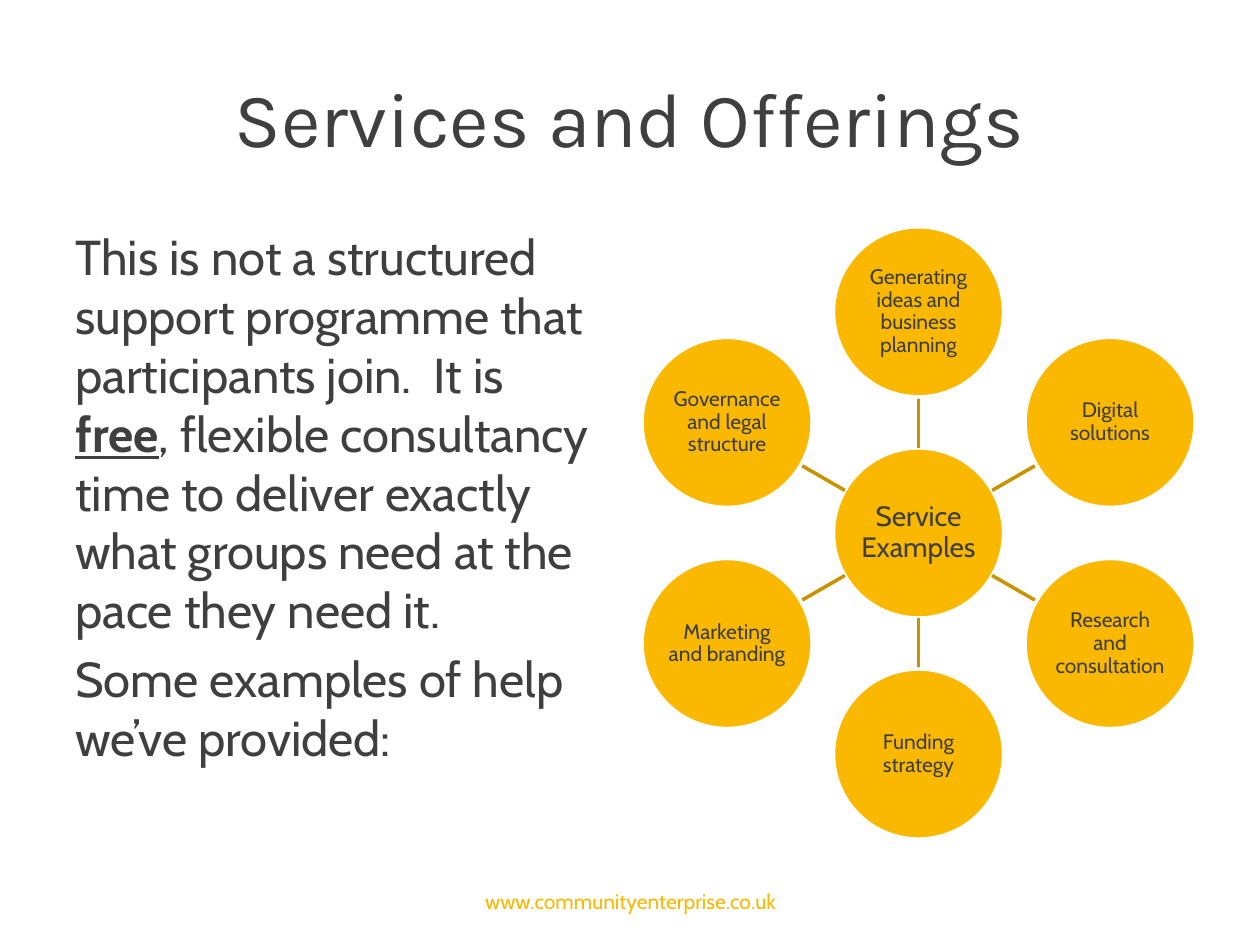
from math import cos, radians, sin

from lxml.etree import SubElement
from pptx import Presentation
from pptx.dml.color import RGBColor
from pptx.enum.shapes import MSO_CONNECTOR, MSO_SHAPE
from pptx.enum.text import MSO_ANCHOR, PP_ALIGN
from pptx.oxml.ns import qn
from pptx.util import Inches, Pt

GOLD = RGBColor(0xFB, 0xB8, 0x00)
DARK_GOLD = RGBColor(0xC9, 0x93, 0x00)
CHARCOAL = RGBColor(0x3F, 0x3F, 0x3F)
WHITE = RGBColor(0xFF, 0xFF, 0xFF)

TITLE = "Services and Offerings"
BODY = [
    [
        ("This is not a structured support programme that participants join.  It is ", False),
        ("free", True),
        (", flexible consultancy time to deliver exactly what groups need at the pace they need it.", False),
    ],
    [("Some examples of help we’ve provided:", False)],
]
WEBSITE = "www.communityenterprise.co.uk"
HUB = "Service Examples"
SERVICES = [
    "Generating ideas and business planning",
    "Digital solutions",
    "Research and consultation",
    "Funding strategy",
    "Marketing and branding",
    "Governance and legal structure",
]

CENTER_X, CENTER_Y = 7.29, 4.23
DIAMETER = 1.35
ORBIT = 1.755


def add_run(paragraph, text, size, color, font="Cabin", emphasis=False):
    run = paragraph.add_run()
    run.text = text
    run.font.name = font
    run.font.size = Pt(size)
    run.font.color.rgb = color
    if emphasis:
        run.font.bold = True
        run.font.underline = True


def add_text_frame(slide, left, top, width, height, anchor):
    box = slide.shapes.add_textbox(Inches(left), Inches(top), Inches(width), Inches(height))
    frame = box.text_frame
    frame.word_wrap = True
    frame.vertical_anchor = anchor
    return frame


def add_centered_text(slide, bounds, text, size, color, font):
    paragraph = add_text_frame(slide, *bounds, MSO_ANCHOR.MIDDLE).paragraphs[0]
    paragraph.alignment = PP_ALIGN.CENTER
    add_run(paragraph, text, size, color, font)


def add_body(slide):
    frame = add_text_frame(slide, 0.5, 1.75, 4.42, 4.95, MSO_ANCHOR.TOP)
    for index, runs in enumerate(BODY):
        paragraph = frame.add_paragraph() if index else frame.paragraphs[0]
        if index:
            paragraph.space_before = Pt(5.6)
        for text, emphasis in runs:
            add_run(paragraph, text, 28, CHARCOAL, emphasis=emphasis)


def point_on_ray(angle, distance):
    return CENTER_X + distance * cos(angle), CENTER_Y + distance * sin(angle)


def add_circle(slide, x, y, text, size):
    circle = slide.shapes.add_shape(
        MSO_SHAPE.OVAL,
        Inches(x - DIAMETER / 2), Inches(y - DIAMETER / 2), Inches(DIAMETER), Inches(DIAMETER),
    )
    circle.shadow.inherit = False
    circle.fill.solid()
    circle.fill.fore_color.rgb = GOLD
    circle.line.color.rgb = WHITE
    circle.line.width = Pt(2)
    frame = circle.text_frame
    frame.word_wrap = True
    frame.vertical_anchor = MSO_ANCHOR.MIDDLE
    frame.margin_left = frame.margin_right = Inches(0.01)
    frame.margin_top = frame.margin_bottom = Inches(0.01)
    paragraph = frame.paragraphs[0]
    paragraph.alignment = PP_ALIGN.CENTER
    paragraph.line_spacing = 0.9
    add_run(paragraph, text, size, CHARCOAL)


def add_spoke(slide, angle):
    start = point_on_ray(angle, DIAMETER / 2)
    end = point_on_ray(angle, ORBIT - DIAMETER / 2)
    spoke = slide.shapes.add_connector(
        MSO_CONNECTOR.STRAIGHT, *(Inches(value) for value in start + end)
    )
    spoke.line.color.rgb = DARK_GOLD
    spoke.line.width = Pt(2)
    SubElement(spoke._element.spPr, qn("a:effectLst"))


def add_service_wheel(slide):
    add_circle(slide, CENTER_X, CENTER_Y, HUB, 16)
    for index, service in enumerate(SERVICES):
        angle = radians(-90 + index * 360 / len(SERVICES))
        add_spoke(slide, angle)
        add_circle(slide, *point_on_ray(angle, ORBIT), service, 12)


def main():
    presentation = Presentation()
    presentation.slide_width = Inches(10)
    presentation.slide_height = Inches(7.5)
    slide = presentation.slides.add_slide(presentation.slide_layouts[6])
    add_centered_text(slide, (0.5, 0.3, 9, 1.25), TITLE, 44, CHARCOAL, "Karla")
    add_body(slide)
    add_centered_text(slide, (3.42, 6.95, 3.17, 0.4), WEBSITE, 12, GOLD, "Cabin")
    add_service_wheel(slide)
    presentation.save("out.pptx")


if __name__ == "__main__":
    main()
